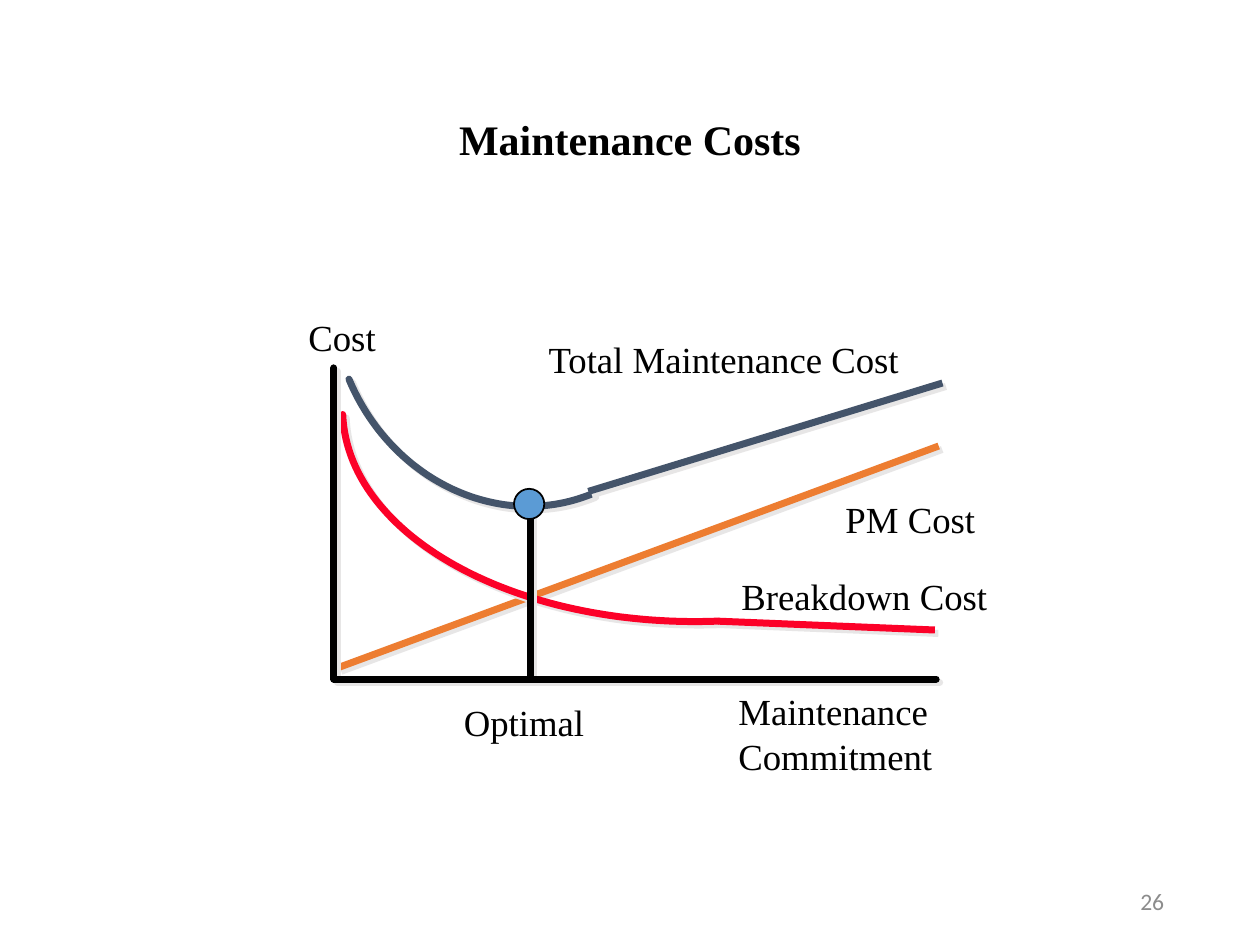
from pptx import Presentation
from pptx.dml.color import RGBColor
from pptx.enum.shapes import MSO_CONNECTOR, MSO_SHAPE
from pptx.enum.text import MSO_ANCHOR, MSO_AUTO_SIZE, PP_ALIGN
from pptx.oxml.ns import qn
from pptx.util import Inches, Pt
from lxml.etree import SubElement

THEME = {
    "black": "000000", "gray": "8C8C8C", "shadow": "E7E6E6",
    "total": "44546A", "prevention": "ED7D31", "breakdown": "FC0128", "optimum": "5B9BD5",
    "serif": "Times New Roman", "sans": "Calibri",
    "title_size": 24, "label_size": 21, "number_size": 13.5,
    "stroke": 4, "outline": 1,
}

TITLE = ("Maintenance Costs", (0.69, 0.4, 8.62, 1.45))
PAGE_NUMBER = ("26", (7.06, 6.95, 2.25, 0.4))
LABELS = [
    ("Maintenance \nCommitment", (5.79, 5.43, 1.75, 0.78), PP_ALIGN.LEFT),
    ("Cost", (2.37, 2.46, 0.69, 0.43), PP_ALIGN.CENTER),
    ("PM Cost", (6.63, 3.9, 1.19, 0.43), PP_ALIGN.CENTER),
    ("Total Maintenance Cost", (4.26, 2.63, 2.97, 0.43), PP_ALIGN.CENTER),
    ("Breakdown Cost", (5.8, 4.51, 2.12, 0.43), PP_ALIGN.CENTER),
    ("Optimal ", (3.6, 5.51, 1.19, 0.43), PP_ALIGN.CENTER),
]
PREVENTION_LINE = ((2.68, 5.3), (7.45, 3.54))
TOTAL_CURVE = ((4.7, 3.92), (3.97, 4.22), (3.11, 3.82), (2.77, 3.01))
TOTAL_LINE = ((4.67, 3.9), (7.48, 3.04))
BREAKDOWN_CURVE = ((5.7, 4.93), (4.09, 4.99), (2.76, 4.25), (2.72, 3.29))
BREAKDOWN_LINE = ((5.7, 4.93), (7.42, 5))
OPTIMUM_LINE = ((4.21, 4.08), (4.21, 5.4))
OPTIMUM_POINT = (4.08, 3.88, 0.24, 0.24)
AXES = ((2.65, 2.92), (2.65, 5.39), (7.43, 5.39))
CURVE_STEPS = 60


def color(name):
    return RGBColor.from_string(THEME[name])


def inches(values):
    return [Inches(value) for value in values]


def write(shape, text, size="label_size", font="serif", fill="black", bold=False,
          align=PP_ALIGN.LEFT, anchor=MSO_ANCHOR.TOP, wrap=False, spacing=None):
    frame = shape.text_frame
    frame.word_wrap = wrap
    frame.auto_size = MSO_AUTO_SIZE.NONE if wrap else MSO_AUTO_SIZE.SHAPE_TO_FIT_TEXT
    frame.vertical_anchor = anchor
    frame.margin_left = frame.margin_right = Inches(0.07)
    frame.margin_top = frame.margin_bottom = Inches(0.04)
    paragraph = frame.paragraphs[0]
    paragraph.text = text
    paragraph.alignment = align
    paragraph.line_spacing = spacing
    for run in paragraph.runs:
        run.font.name = THEME[font]
        run.font.size = Pt(THEME[size])
        run.font.bold = bold
        run.font.color.rgb = color(fill)


def style_stroke(shape, name):
    shape.line.color.rgb = color(name)
    shape.line.width = Pt(THEME["stroke"])
    effects = SubElement(shape._element.spPr, qn("a:effectLst"))
    shadow = SubElement(effects, qn("a:outerShdw"), dist=str(Pt(2.8)),
                        dir=str(45 * 60000), algn="ctr", rotWithShape="0")
    SubElement(shadow, qn("a:srgbClr"), val=THEME["shadow"])


def add_line(slide, ends, name):
    start, end = ends
    line = slide.shapes.add_connector(MSO_CONNECTOR.STRAIGHT, *inches(start), *inches(end))
    style_stroke(line, name)


def add_outline(slide, points, name):
    builder = slide.shapes.build_freeform(*inches(points[0]))
    builder.add_line_segments([inches(point) for point in points[1:]], close=False)
    outline = builder.convert_to_shape()
    outline.fill.background()
    style_stroke(outline, name)
    outline.line._get_or_add_ln().set("cap", "rnd")


def curve_points(controls):
    def point(t):
        weights = ((1 - t) ** 3, 3 * t * (1 - t) ** 2, 3 * t * t * (1 - t), t ** 3)
        return [sum(w * c for w, c in zip(weights, axis)) for axis in zip(*controls)]
    return [point(step / CURVE_STEPS) for step in range(CURVE_STEPS + 1)]


def add_optimum(slide):
    point = slide.shapes.add_shape(MSO_SHAPE.OVAL, *inches(OPTIMUM_POINT))
    point.shadow.inherit = False
    point.fill.solid()
    point.fill.fore_color.rgb = color("optimum")
    point.line.color.rgb = color("black")
    point.line.width = Pt(THEME["outline"])


def main():
    presentation = Presentation()
    presentation.slide_width, presentation.slide_height = Inches(10), Inches(7.5)
    slide = presentation.slides.add_slide(presentation.slide_layouts[5])

    text, box = TITLE
    title = slide.shapes.title
    title.left, title.top, title.width, title.height = inches(box)
    write(title, text, size="title_size", bold=True, align=PP_ALIGN.CENTER,
          anchor=MSO_ANCHOR.MIDDLE, wrap=True, spacing=0.9)
    text, box = PAGE_NUMBER
    write(slide.shapes.add_textbox(*inches(box)), text, size="number_size", font="sans",
          fill="gray", align=PP_ALIGN.RIGHT, anchor=MSO_ANCHOR.MIDDLE, wrap=True)

    add_line(slide, PREVENTION_LINE, "prevention")
    add_outline(slide, curve_points(TOTAL_CURVE), "total")
    add_outline(slide, curve_points(BREAKDOWN_CURVE), "breakdown")
    add_line(slide, TOTAL_LINE, "total")
    add_line(slide, BREAKDOWN_LINE, "breakdown")
    for text, box, align in LABELS:
        write(slide.shapes.add_textbox(*inches(box)), text, align=align)
    add_line(slide, OPTIMUM_LINE, "black")
    add_optimum(slide)
    add_outline(slide, AXES, "black")

    presentation.save("out.pptx")


if __name__ == "__main__":
    main()
